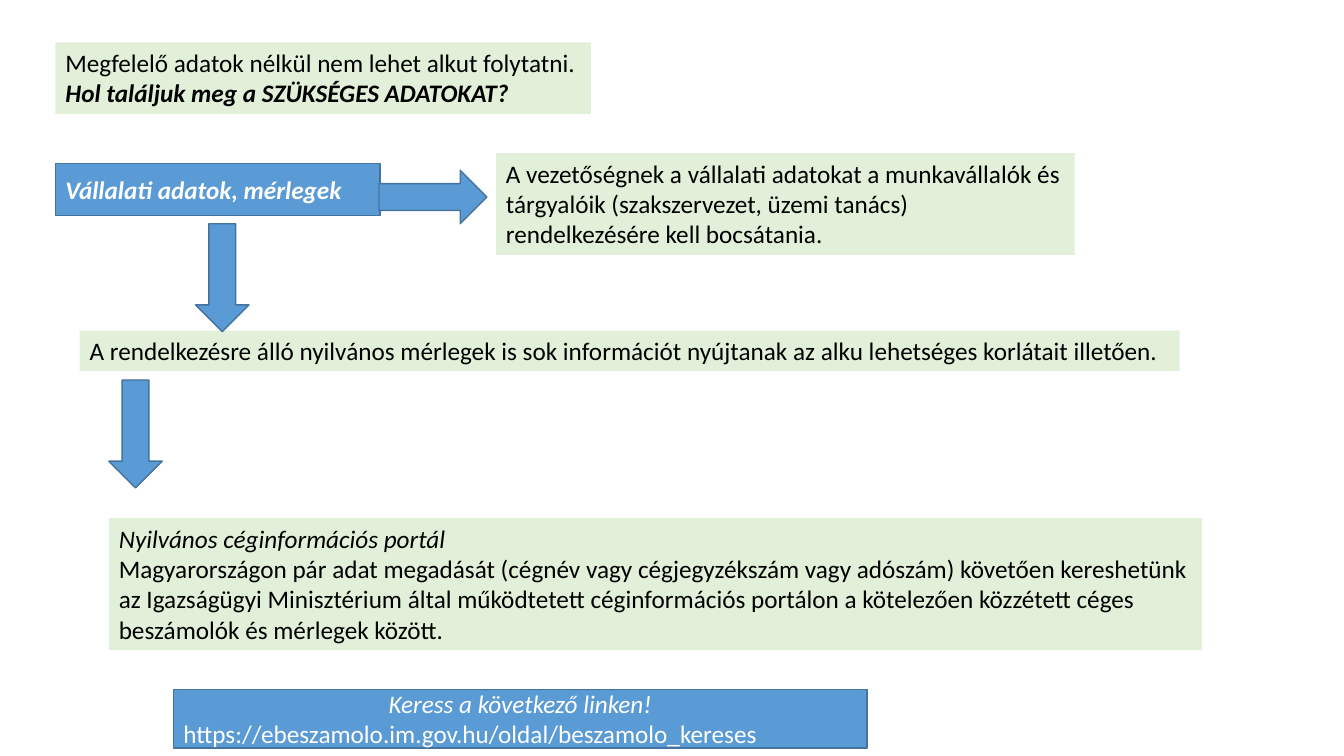
from pptx import Presentation
from pptx.dml.color import RGBColor
from pptx.enum.shapes import MSO_SHAPE
from pptx.enum.text import MSO_ANCHOR, MSO_AUTO_SIZE, PP_ALIGN
from pptx.util import Inches, Pt

GREEN, BLUE, EDGE = "E2F0D9", "5B9BD5", "43739E"
BLACK, WHITE = "000000", "FFFFFF"


def rgb(value):
    return RGBColor.from_string(value)


def add_block(kind, box, fill, line=None):
    sp = s.shapes.add_shape(kind, *[Inches(v) for v in box])
    sp.shadow.inherit = False
    sp.fill.solid()
    sp.fill.fore_color.rgb = rgb(fill)
    if line:
        sp.line.color.rgb = rgb(line)
        sp.line.width = Pt(1)
    else:
        sp.line.fill.background()
    return sp


prs = Presentation()
prs.slide_width, prs.slide_height = Inches(13.33), Inches(7.5)
s = prs.slides.add_slide(prs.slide_layouts[6])

# Text boxes: position, fill, paragraphs as (text, bold, italic)
boxes = [
    ((0.55, 0.42, 5.31, 0.71), GREEN, [
        ("Megfelelő adatok nélkül nem lehet alkut folytatni.", False, False),
        ("Hol találjuk meg a SZÜKSÉGES ADATOKAT?", True, True)]),
    ((0.55, 1.62, 3.22, 0.52), BLUE, [
        ("Vállalati adatok, mérlegek", True, True)]),
    ((4.92, 1.52, 5.74, 1.01), GREEN, [
        ("A vezetőségnek a vállalati adatokat a munkavállalók és tárgyalóik "
         "(szakszervezet, üzemi tanács) rendelkezésére kell bocsátania.", False, False)]),
    ((0.79, 3.28, 10.91, 0.4), GREEN, [
        ("A rendelkezésre álló nyilvános mérlegek is sok információt nyújtanak "
         "az alku lehetséges korlátait illetően.", False, False)]),
    ((1.08, 5.14, 10.84, 1.31), GREEN, [
        ("Nyilvános céginformációs portál", False, True),
        ("Magyarországon pár adat megadását (cégnév vagy cégjegyzékszám vagy adószám) "
         "követően kereshetünk az Igazságügyi Minisztérium által működtetett "
         "céginformációs portálon a kötelezően közzétett céges beszámolók és "
         "mérlegek között.", False, False)]),
    ((1.72, 6.84, 6.88, 0.58), BLUE, [
        ("Keress a következő linken!", False, True),
        ("https://ebeszamolo.im.gov.hu/oldal/beszamolo_kereses", False, False)]),
]
for box, fill, lines in boxes:
    is_blue = fill == BLUE
    sp = add_block(MSO_SHAPE.RECTANGLE, box, fill, EDGE if is_blue else None)
    tf = sp.text_frame
    tf.word_wrap = True
    tf.vertical_anchor = MSO_ANCHOR.MIDDLE if is_blue else MSO_ANCHOR.TOP
    tf.auto_size = MSO_AUTO_SIZE.NONE if is_blue else MSO_AUTO_SIZE.SHAPE_TO_FIT_TEXT
    for i, (text, bold, italic) in enumerate(lines):
        p = tf.paragraphs[0] if i == 0 else tf.add_paragraph()
        p.text = text
        p.alignment = PP_ALIGN.LEFT
        p.font.name, p.font.size = "Calibri", Pt(18)
        p.font.bold, p.font.italic = bold, italic
        p.font.color.rgb = rgb(WHITE if is_blue else BLACK)

# The link box, last in the list, has a centred heading
tf.paragraphs[0].alignment = PP_ALIGN.CENTER

# Block arrows, all of one length and breadth
LENGTH, BREADTH = 1.07, 0.53
add_block(MSO_SHAPE.RIGHT_ARROW, (3.76, 1.69, LENGTH, BREADTH), BLUE, EDGE)
for left, top in [(1.94, 2.22), (1.08, 3.77)]:
    add_block(MSO_SHAPE.DOWN_ARROW, (left, top, BREADTH, LENGTH), BLUE, EDGE)

prs.save("out.pptx")
